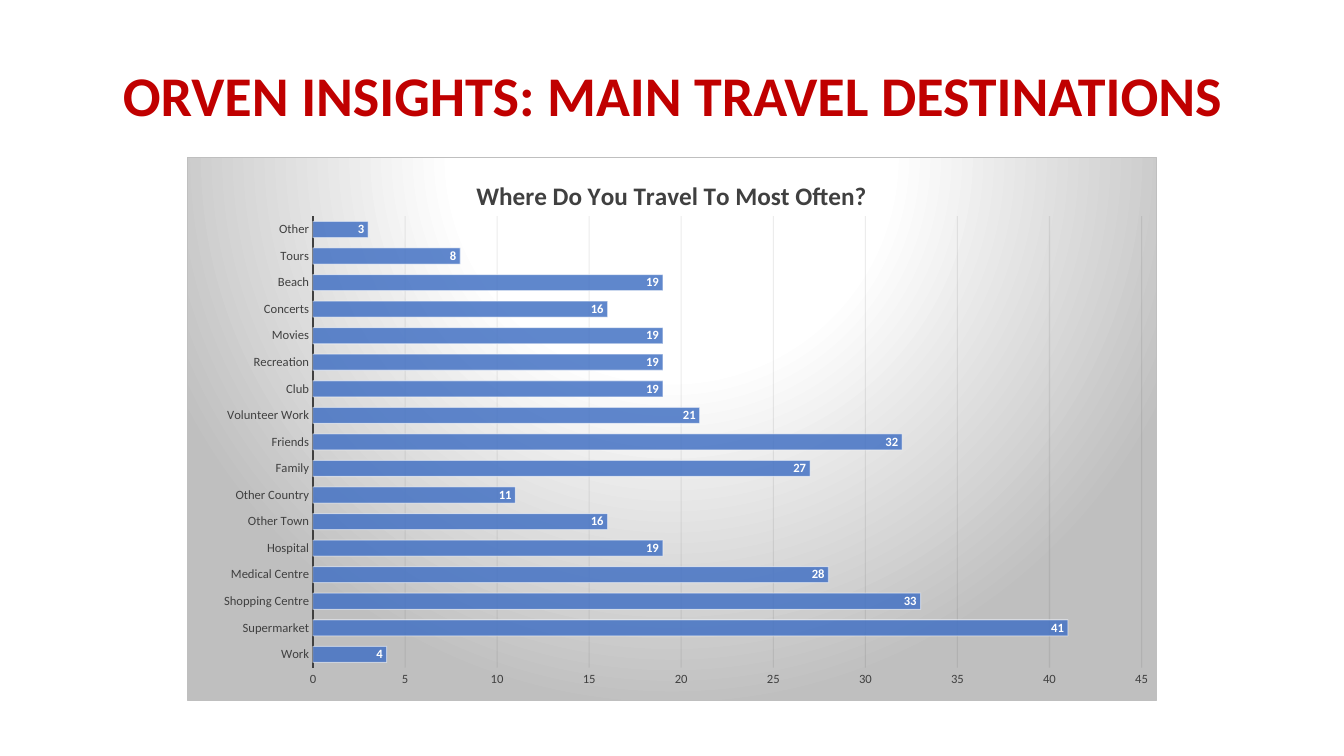
from dataclasses import dataclass
from typing import Any

from pptx import Presentation
from pptx.chart.data import CategoryChartData
from pptx.dml.color import RGBColor
from pptx.enum.chart import XL_CHART_TYPE, XL_LABEL_POSITION, XL_TICK_MARK
from pptx.enum.text import MSO_ANCHOR, PP_ALIGN
from pptx.oxml import parse_xml
from pptx.oxml.ns import nsdecls, qn
from pptx.util import Cm, Pt


@dataclass(frozen=True)
class Theme:
    font: str = "Calibri"
    red: str = "C00000"
    text: str = "404040"
    bar: str = "4472C4"
    white: str = "FFFFFF"
    gray: str = "BFBFBF"
    grid: str = "0D0D0D"
    black: str = "000000"
    title_size: int = 40
    chart_title_size: int = 18
    chart_size: int = 10
    label_size: int = 9


@dataclass(frozen=True)
class Box:
    left: float
    top: float
    width: float
    height: float

    def lengths(self) -> tuple:
        return Cm(self.left), Cm(self.top), Cm(self.width), Cm(self.height)


@dataclass(frozen=True)
class Destination:
    name: str
    votes: int


THEME = Theme()
TITLE_BOX = Box(2.34, 1, 29.21, 2.95)
CHART_BOX = Box(4.7, 3.96, 24.45, 13.7)
DESTINATIONS = [
    Destination("Work", 4),
    Destination("Supermarket", 41),
    Destination("Shopping Centre", 33),
    Destination("Medical Centre", 28),
    Destination("Hospital", 19),
    Destination("Other Town", 16),
    Destination("Other Country", 11),
    Destination("Family", 27),
    Destination("Friends", 32),
    Destination("Volunteer Work", 21),
    Destination("Club", 19),
    Destination("Recreation", 19),
    Destination("Movies", 19),
    Destination("Concerts", 16),
    Destination("Beach", 19),
    Destination("Tours", 8),
    Destination("Other", 3),
]


def apply(target: Any, values: dict[str, Any]) -> None:
    for name, value in values.items():
        setattr(target, name, value)


def style_font(font: Any, size: int, color: str, bold: bool = False) -> None:
    apply(font, {"name": THEME.font, "size": Pt(size), "bold": bold})
    font.color.rgb = RGBColor.from_string(color)


def style_line(line: Any, color: str, width: float) -> None:
    line.color.rgb = RGBColor.from_string(color)
    line.width = Pt(width)


def set_alpha(fill_parent: Any, percent: int) -> None:
    color = fill_parent.find(qn("a:solidFill")).find(qn("a:srgbClr"))
    color.append(parse_xml(f'<a:alpha {nsdecls("a")} val="{percent * 1000}"/>'))


def manual_layout(**percents: float) -> Any:
    inner = '<c:layoutTarget val="inner"/>' if "w" in percents else ""
    places = "".join(f'<c:{k} val="{v / 100}"/>' for k, v in percents.items())
    return parse_xml(
        f'<c:layout {nsdecls("c")}><c:manualLayout>{inner}'
        f'<c:xMode val="edge"/><c:yMode val="edge"/>{places}</c:manualLayout></c:layout>'
    )


def chart_background() -> Any:
    stops = "".join(
        f'<a:gs pos="{pos * 1000}"><a:srgbClr val="{color}"/></a:gs>'
        for pos, color in ((0, THEME.white), (39, THEME.white), (100, THEME.gray))
    )
    return parse_xml(
        f'<c:spPr {nsdecls("c", "a")}><a:gradFill><a:gsLst>{stops}</a:gsLst>'
        '<a:path path="circle">'
        '<a:fillToRect l="50000" t="-80000" r="50000" b="180000"/></a:path></a:gradFill>'
        f'<a:ln w="{Pt(0.75)}"><a:solidFill><a:srgbClr val="{THEME.gray}"/></a:solidFill></a:ln>'
        "</c:spPr>"
    )


def replace_layout(parent: Any, layout: Any, index: int) -> None:
    for old in parent.findall(qn("c:layout")):
        parent.remove(old)
    parent.insert(index, layout)


def add_title(s: Any) -> None:
    sp = s.shapes.title
    sp.left, sp.top, sp.width, sp.height = TITLE_BOX.lengths()
    tf = sp.text_frame
    apply(tf, {"word_wrap": True, "vertical_anchor": MSO_ANCHOR.MIDDLE})
    p = tf.paragraphs[0]
    apply(p, {"alignment": PP_ALIGN.CENTER, "line_spacing": 0.9})
    r = p.add_run()
    r.text = "ORVEN INSIGHTS: MAIN TRAVEL DESTINATIONS"
    style_font(r.font, THEME.title_size, THEME.red, True)


def style_axes(chart: Any) -> None:
    for axis in (chart.category_axis, chart.value_axis):
        apply(axis, {"major_tick_mark": XL_TICK_MARK.NONE,
                     "minor_tick_mark": XL_TICK_MARK.NONE})
        style_font(axis.tick_labels.font, THEME.label_size, THEME.text)
    chart.category_axis.has_major_gridlines = False
    style_line(chart.category_axis.format.line, THEME.text, 1.5)
    value_axis = chart.value_axis
    apply(value_axis, {"minimum_scale": 0, "maximum_scale": 45,
                       "major_unit": 5, "has_major_gridlines": True})
    value_axis.format.line.fill.background()
    grid = value_axis.major_gridlines.format.line
    style_line(grid, THEME.grid, 0.75)
    set_alpha(grid.fill._xPr, 7)


def style_bars(chart: Any) -> None:
    plot = chart.plots[0]
    apply(plot, {"gap_width": 65, "vary_by_categories": False})
    bars = plot.series[0]
    bars.format.fill.solid()
    bars.format.fill.fore_color.rgb = RGBColor.from_string(THEME.bar)
    set_alpha(bars.format.fill._xPr, 85)
    style_line(bars.format.line, THEME.white, 0.75)
    set_alpha(bars.format.line.fill._xPr, 50)
    labels = bars.data_labels
    apply(labels, {"show_value": True, "position": XL_LABEL_POSITION.INSIDE_END})
    style_font(labels.font, THEME.label_size, THEME.white, True)


def add_destination_chart(s: Any) -> None:
    data = CategoryChartData()
    data.categories = [d.name for d in DESTINATIONS]
    data.add_series("Series 1", [d.votes for d in DESTINATIONS])
    chart = s.shapes.add_chart(
        XL_CHART_TYPE.BAR_CLUSTERED, *CHART_BOX.lengths(), data).chart
    apply(chart, {"has_legend": False, "has_title": True})
    style_font(chart.font, THEME.chart_size, THEME.black)

    # Chart title
    title = chart.chart_title
    title.include_in_layout = False
    r = title.text_frame.paragraphs[0].add_run()
    r.text = "Where Do You Travel To Most Often?"
    style_font(r.font, THEME.chart_title_size, THEME.text, True)
    replace_layout(title._element, manual_layout(x=29.4, y=3), 1)

    # Axes, bars and background
    style_axes(chart)
    style_bars(chart)
    chart_xml = chart._chartSpace.find(qn("c:chart"))
    replace_layout(chart_xml.find(qn("c:plotArea")),
                   manual_layout(x=13, y=10.8, w=85.5, h=83.2), 0)
    chart_xml.addnext(chart_background())


def main() -> None:
    prs = Presentation()
    apply(prs, {"slide_width": Cm(33.87), "slide_height": Cm(19.05)})
    s = prs.slides.add_slide(prs.slide_layouts[5])
    add_title(s)
    add_destination_chart(s)
    prs.save("out.pptx")


if __name__ == "__main__":
    main()
